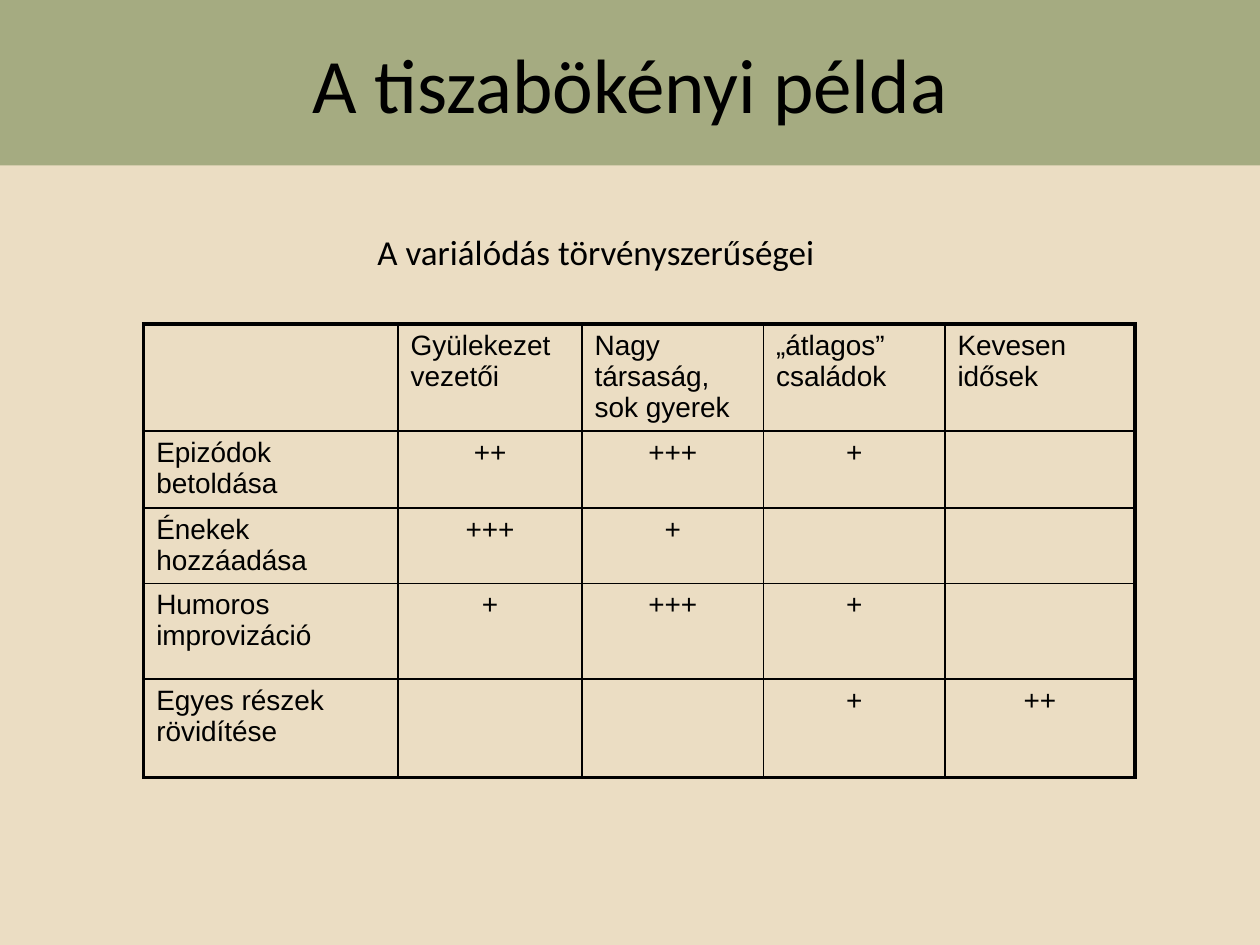
import pptx
import pptx.dml.color
import pptx.enum.text
import pptx.oxml
import pptx.oxml.ns
import pptx.util
from lxml import etree

WIDTH, HEIGHT = 10, 7.5
COLORS = {"background": "EBDDC3", "band": "A5AB81", "ink": "000000"}
COLUMNS = [2.02, 1.46, 1.44, 1.44, 1.51]
ROWS = [0.85, 0.61, 0.6, 0.76, 0.78]
CELLS = [
    ["", "Gyülekezet vezetői", "Nagy társaság, sok gyerek", "„átlagos” családok", "Kevesen idősek"],
    ["Epizódok betoldása", "++", "+++", "+", ""],
    ["Énekek hozzáadása", "+++", "+", "", ""],
    ["Humoros improvizáció", "+", "+++", "+", ""],
    ["Egyes részek rövidítése", "", "", "+", "++"],
]
INNER_LINE, OUTER_LINE = 1, 2.25
ALIGN = pptx.enum.text.PP_ALIGN
ANCHOR = pptx.enum.text.MSO_ANCHOR


def color(name):
    return pptx.dml.color.RGBColor.from_string(COLORS[name])


def place(shape, left, top, width, height):
    """Position a shape by shares of the slide's size."""
    shape.left = pptx.util.Inches(left * WIDTH)
    shape.top = pptx.util.Inches(top * HEIGHT)
    shape.width = pptx.util.Inches(width * WIDTH)
    shape.height = pptx.util.Inches(height * HEIGHT)


def write(frame, text, size, font="Calibri", align=ALIGN.CENTER, anchor=ANCHOR.TOP):
    frame.word_wrap = True
    frame.vertical_anchor = anchor
    paragraph = frame.paragraphs[0]
    paragraph.alignment = align
    paragraph.font.size = pptx.util.Pt(size)
    if text:
        run = paragraph.add_run()
        run.text = text
        run.font.size = pptx.util.Pt(size)
        run.font.name = font
        run.font.color.rgb = color("ink")
    return paragraph


def add_title(slide):
    title = slide.shapes.title
    place(title, 0, 0, 1, 0.175)
    title.fill.solid()
    title.fill.fore_color.rgb = color("band")
    write(title.text_frame, "A tiszabökényi példa", 44, anchor=ANCHOR.MIDDLE)


def add_subtitle(slide):
    body = slide.placeholders[1]
    place(body, 0.028, 0.237, 0.89, 0.095)
    paragraph = write(body.text_frame, "A variálódás törvényszerűségei", 20)
    properties = paragraph._p.get_or_add_pPr()
    indent = pptx.util.Inches(0.38)
    properties.set("marL", str(indent))
    properties.set("indent", str(-indent))
    etree.SubElement(properties, pptx.oxml.ns.qn("a:buNone")).tail = None
    # Bullet settings precede the default run properties in the schema.
    defaults = properties.find(pptx.oxml.ns.qn("a:defRPr"))
    if defaults is not None:
        properties.append(defaults)


def set_borders(cell, widths):
    """Draw the four sides; widths maps L, R, T and B to points."""
    properties = cell._tc.get_or_add_tcPr()
    for side, width in widths.items():
        properties.append(pptx.oxml.parse_xml(
            f'<a:ln{side} {pptx.oxml.ns.nsdecls("a")} w="{pptx.util.Pt(width)}">'
            f'<a:solidFill><a:srgbClr val="{COLORS["ink"]}"/></a:solidFill></a:ln{side}>'))


def set_space_before(paragraph, percent):
    properties = paragraph._p.get_or_add_pPr()
    properties.insert(0, pptx.oxml.parse_xml(
        f'<a:spcBef {pptx.oxml.ns.nsdecls("a")}><a:spcPct val="{percent * 1000}"/></a:spcBef>'))


def add_variation_table(slide):
    frame = slide.shapes.add_table(
        len(ROWS), len(COLUMNS), pptx.util.Inches(1.14), pptx.util.Inches(2.57),
        pptx.util.Inches(sum(COLUMNS)), pptx.util.Inches(sum(ROWS)))
    table = frame.table
    table.first_row = table.horz_banding = False
    for column, width in zip(table.columns, COLUMNS):
        column.width = pptx.util.Inches(width)
    for row, height in zip(table.rows, ROWS):
        row.height = pptx.util.Inches(height)

    last_row, last_column = len(ROWS) - 1, len(COLUMNS) - 1
    for row, texts in enumerate(CELLS):
        for column, text in enumerate(texts):
            cell = table.cell(row, column)
            is_label = row == 0 or column == 0
            paragraph = write(cell.text_frame, text, 16, font="Arial",
                              align=ALIGN.LEFT if is_label else ALIGN.CENTER)
            set_space_before(paragraph, 20)
            edges = {"L": column == 0, "R": column == last_column,
                     "T": row == 0, "B": row == last_row}
            set_borders(cell, {side: OUTER_LINE if outer else INNER_LINE
                               for side, outer in edges.items()})
            cell.fill.background()


def main():
    presentation = pptx.Presentation()
    presentation.slide_width = pptx.util.Inches(WIDTH)
    presentation.slide_height = pptx.util.Inches(HEIGHT)
    slide = presentation.slides.add_slide(presentation.slide_layouts[1])
    slide.background.fill.solid()
    slide.background.fill.fore_color.rgb = color("background")
    add_title(slide)
    add_variation_table(slide)
    add_subtitle(slide)
    presentation.save("out.pptx")


if __name__ == "__main__":
    main()
